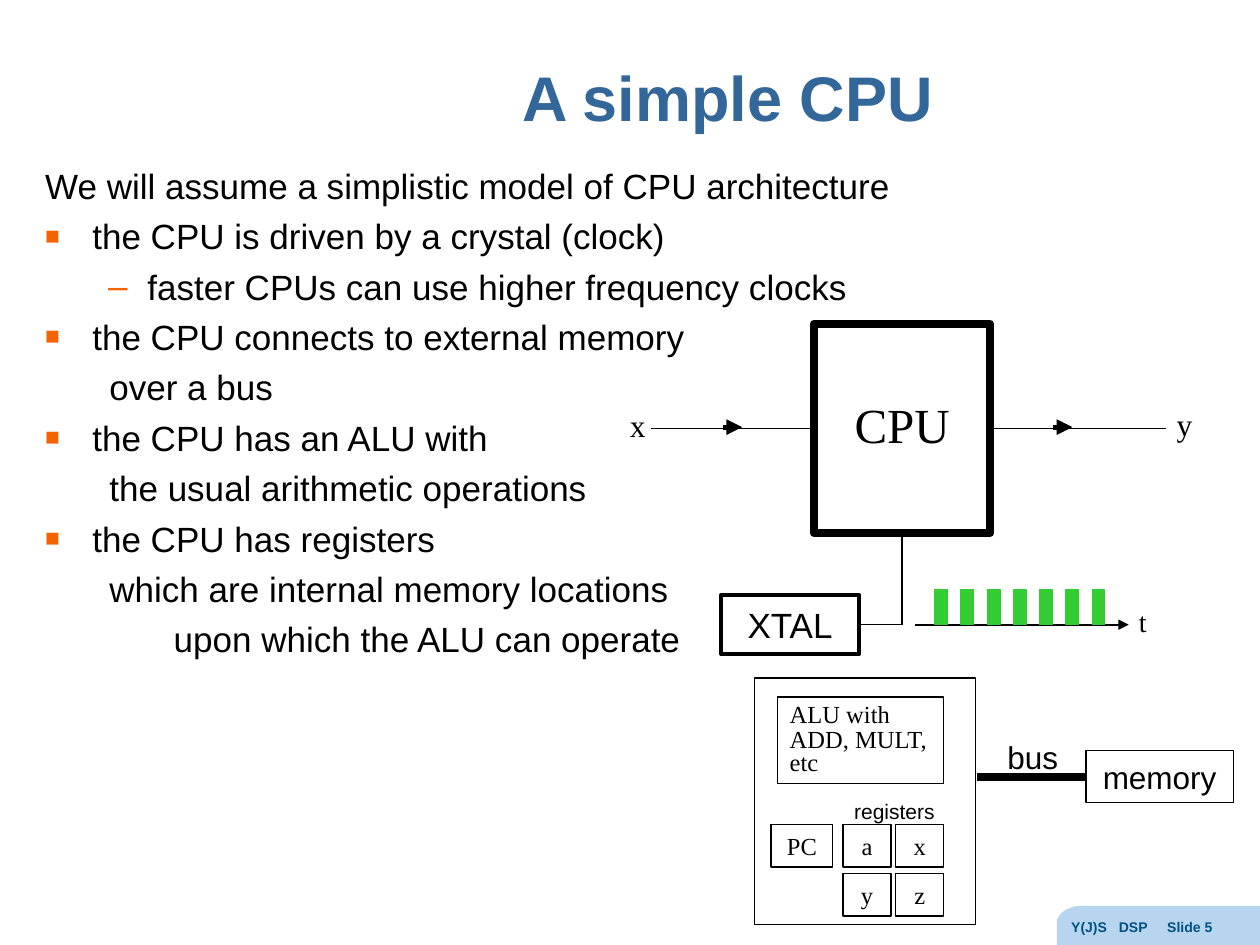
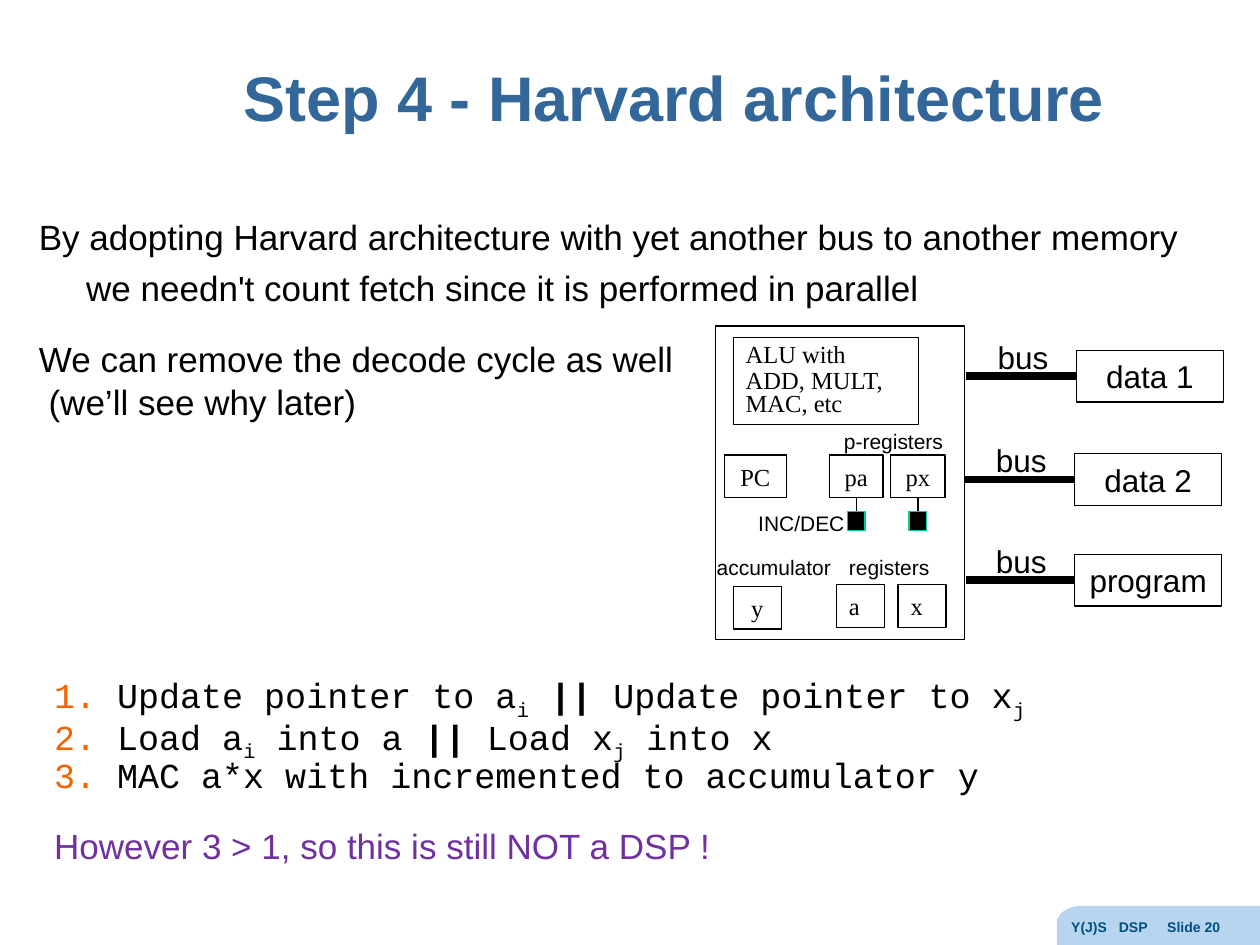
from lxml.etree import SubElement
from pptx import Presentation
from pptx.dml.color import RGBColor
from pptx.enum.shapes import MSO_CONNECTOR, MSO_SHAPE
from pptx.enum.text import MSO_ANCHOR, PP_ALIGN
from pptx.oxml.ns import qn
from pptx.util import Pt

COLORS = {
    "title": "336699", "ink": "000000", "paper": "FFFFFF", "bullet": "F46300",
    "tab": "B7D5EF", "tab_text": "005081", "pulse": "33CC33",
    "pointer_edge": "00CC99", "verdict": "7030A0",
}
SANS, SERIF, MONO = "Arial", "Times New Roman", "Courier New"

TITLE = {"name": SANS, "size": Pt(36), "bold": True, "color": "title"}
FOOTER = {"name": SANS, "size": Pt(8), "bold": True, "color": "tab_text"}
BODY = {"name": SANS, "size": Pt(20)}
CODE = {"name": MONO, "size": Pt(20)}
BUS = {"name": SANS, "size": Pt(18)}
CAPTION = {"name": SANS, "size": Pt(12)}
SIGNAL = {"name": SERIF, "size": Pt(18)}
TIME = {"name": SERIF, "size": Pt(16)}
CORE = {"name": SERIF, "size": Pt(28)}
REGISTER = {"name": SERIF, "size": Pt(14)}
SUB, BOLD = {"baseline": -25000}, {"bold": True}

CENTER = {"alignment": PP_ALIGN.CENTER}
TITLE_FORMAT = {**CENTER, "line_spacing": 0.9}
ALU_FORMAT = {"line_spacing": 0.8, "space_before": Pt(1)}
BODY_FORMAT = {"space_before": Pt(4.8)}

# Left margin, first-line indent, bullet tag and its attributes
LEVELS = {
    "intro": (27, -27, None, {}),
    "point": (27, -27, "a:buChar", {"char": "■"}),
    "dash": (58.5, -22.5, "a:buChar", {"char": "–"}),
    "more": (36.75, 0, None, {}),
    "deeper": (73.5, 0, None, {}),
    "hanging": (27, 0, None, {}),
    "flush": (0, 0, None, {}),
    "step": (36, -36, "a:buAutoNum", {"type": "arabicPeriod"}),
}


def block(slide, place, lines=(), font=None, layout=None, edge=None, fill=None,
          edge_color="ink", anchor=MSO_ANCHOR.MIDDLE):
    """Add a rectangle, or a bare text box when edge is None.

    A line is (content, level, extra format); content is text or (text, font) runs.
    """
    place = [Pt(length) for length in place]
    if edge is None:
        shape = slide.shapes.add_textbox(*place)
    else:
        shape = slide.shapes.add_shape(MSO_SHAPE.RECTANGLE, *place)
        shape.shadow.inherit = False
        shape.line.width = Pt(edge)
        shape.line.color.rgb = RGBColor.from_string(COLORS[edge_color])
        if fill:
            shape.fill.solid()
            shape.fill.fore_color.rgb = RGBColor.from_string(COLORS[fill])
        else:
            shape.fill.background()
    frame = shape.text_frame
    frame.word_wrap = True
    frame.vertical_anchor = anchor
    for index, (content, level, extra) in enumerate(lines):
        paragraph = frame.add_paragraph() if index else frame.paragraphs[0]
        for key, value in {"alignment": PP_ALIGN.LEFT, **(layout or {}), **extra}.items():
            setattr(paragraph, key, value)
        margin, indent, tag, attributes = LEVELS[level]
        properties = paragraph._p.get_or_add_pPr()
        properties.set("marL", str(Pt(margin)))
        properties.set("indent", str(Pt(indent)))
        if tag:
            SubElement(SubElement(properties, qn("a:buClr")), qn("a:srgbClr"),
                       val=COLORS["bullet"])
            if level == "point":
                SubElement(properties, qn("a:buSzPct"), val="70000")
            SubElement(properties, qn("a:buFont"), typeface=font["name"])
            SubElement(properties, qn(tag), attributes)
        for text, change in [(content, {})] if isinstance(content, str) else content:
            run = paragraph.add_run()
            run.text = text
            style = {"color": "ink", **font, **change}
            run.font.color.rgb = RGBColor.from_string(COLORS[style.pop("color")])
            for attribute in ("baseline", "spc"):
                if attribute in style:
                    run._r.get_or_add_rPr().set(attribute, str(style.pop(attribute)))
            for key, value in style.items():
                setattr(run.font, key, value)
    return shape


def wire(slide, start, end, weight=0.75, arrow=False, begin=None, finish=None):
    """Draw a straight line; begin and finish are (shape, side) to join."""
    line = slide.shapes.add_connector(
        MSO_CONNECTOR.STRAIGHT, *[Pt(length) for length in (*start, *end)])
    line.line.width = Pt(weight)
    line.line.color.rgb = RGBColor.from_string(COLORS["ink"])
    if arrow:
        SubElement(line.line._get_or_add_ln(), qn("a:tailEnd"), type="triangle")
    SubElement(line._element.spPr, qn("a:effectLst"))
    if begin:
        line.begin_connect(*begin)
    if finish:
        line.end_connect(*finish)


deck = Presentation()
deck.slide_width, deck.slide_height = Pt(720), Pt(540)

pages = [
    ("A simple CPU", 5, (152.6, 13, 526.3, 90), (18.7, 85.7, 689, 427), [
        ("We will assume a simplistic model of CPU architecture", "intro", {}),
        ("the CPU is driven by a crystal (clock)", "point", {}),
        ("faster CPUs can use higher frequency clocks", "dash", {}),
        ("the CPU connects to external memory", "point", {}),
        ("over a bus", "more", {}),
        ("the CPU has an ALU with", "point", {}),
        ("the usual arithmetic operations", "more", {}),
        ("the CPU has registers", "point", {}),
        ("which are internal memory locations", "more", {}),
        ("upon which the ALU can operate", "deeper", {}),
    ]),
    ("Step 4 - Harvard architecture", 20, (71.3, 13, 627.8, 90), (15.1, 115.2, 680, 257), [
        ("By adopting Harvard architecture with yet another bus to another memory", "intro", {}),
        ("we needn't count fetch since it is performed in parallel", "hanging", {}),
        ("We can remove the decode cycle as well", "flush", {"space_before": Pt(16.8)}),
        (" (we’ll see why later)", "flush", {"line_spacing": 0.8}),
    ]),
]
tab_outline = [(720, 540), (604, 540), (604, 525.6), (606.2, 522),
               (609.1, 519.8), (612.7, 518.4), (615.6, 517.7)]

slides = []
for title, number, title_place, body_place, body in pages:
    slide = deck.slides.add_slide(deck.slide_layouts[6])
    slides.append(slide)
    builder = slide.shapes.build_freeform(Pt(720), Pt(517.7))
    builder.add_line_segments([(Pt(x), Pt(y)) for x, y in tab_outline])
    corner_tab = builder.convert_to_shape()
    corner_tab.shadow.inherit = False
    corner_tab.fill.solid()
    corner_tab.fill.fore_color.rgb = RGBColor.from_string(COLORS["tab"])
    corner_tab.line.fill.background()
    # Widened letter spacing on the two gaps, in hundredths of a point
    footer = [("Y(J)S", {}), (" ", {"spc": 445}), ("DSP", {}), (" ", {"spc": 890}),
              (f"Slide {number}", {})]
    block(slide, (605, 521.5, 115, 18.5), [(footer, "flush", {})], FOOTER,
          anchor=MSO_ANCHOR.TOP)
    block(slide, title_place, [(title, "flush", {})], TITLE, TITLE_FORMAT)
    text = block(slide, body_place, body, BODY, BODY_FORMAT, anchor=MSO_ANCHOR.TOP)
    text.text_frame.margin_top = Pt(8.2)
simple, harvard = slides

# Simple CPU: signal path and clock
wire(simple, (372, 244.8), (666, 244.8))
cpu = block(simple, (465.1, 185, 100.8, 119.6), [("CPU", "flush", {})], CORE, CENTER, 4.5, "paper")
cpu.text_frame.margin_bottom = Pt(8.4)
crystal = block(simple, (412, 340, 79, 33.8), [("XTAL", "flush", {})], BODY, CENTER, 2.25)
wire(simple, (491, 356.9), (515.5, 356.9), begin=(crystal, 3))
wire(simple, (515.5, 356.9), (515.5, 304.6), finish=(cpu, 2))
wire(simple, (522.7, 357), (645, 357), 1, arrow=True)
for pulse in range(7):
    block(simple, (534.2 + 15 * pulse, 337, 7.2, 20), edge=0.75, fill="pulse", edge_color="pulse")
for x in (413.3, 602):
    wire(simple, (x, 244.1), (x + 10.8, 244.1), 3, arrow=True)
for name, x, y, font in (("t", 643.7, 341, TIME), ("x", 352.8, 229, SIGNAL), ("y", 665.3, 228.3, SIGNAL)):
    block(simple, (x, y, 23, 28), [(name, "flush", {})], font)

# Processors, each with its ALU
for slide, processor, alu, operations in (
    (simple, (431.3, 387.4, 126, 141), (444.2, 398.2, 95, 49.7), "ADD, MULT, etc"),
    (harvard, (409, 186.3, 142, 179), (419, 193, 106, 49.7), "ADD, MULT, MAC, etc"),
):
    block(slide, processor, edge=0.75, fill="paper")
    block(slide, alu, [("ALU with", "flush", {"space_before": Pt(0)}), (operations, "flush", {})],
          REGISTER, ALU_FORMAT, 0.75)

# Memories and their buses
for slide, name, x, y, bus_x in (
    (simple, "memory", 620.6, 429, 558),
    (harvard, "data 1", 615, 200.2, 552.2),
    (harvard, "data 2", 614, 259.2, 551),
    (harvard, "program", 614, 316.8, 552.2),
):
    memory = block(slide, (x, y, 84.2, 29.6), [(name, "flush", {})], BUS, CENTER, 0.75)
    wire(slide, (bus_x, y + 14.8), (x, y + 14.8), 4.5, finish=(memory, 1))
    block(slide, (x - 52, y - 10.8, 57, 28.8), [("bus", "flush", {})], BUS)

# Registers
for slide, name, x, y, width, layout in (
    (simple, "PC", 440.6, 471, 35.3, CENTER),
    (simple, "a", 481.7, 471, 27.4, CENTER),
    (simple, "x", 511.9, 471, 27.4, CENTER),
    (simple, "y", 481.7, 499, 27.4, CENTER),
    (simple, "z", 511.9, 499, 27.4, CENTER),
    (harvard, "PC", 414, 260, 35.3, CENTER),
    (harvard, "y", 419, 335, 27.4, CENTER),
    (harvard, "a", 478, 334, 27.4, {}),
    (harvard, "x", 513.2, 334, 27.4, {}),
):
    block(slide, (x, y, width, 24.5), [(name, "flush", {})], REGISTER, layout, 0.75)

# Pointer registers with their increment units
for name, x, width in (("pa", 474, 30.6), ("px", 509, 31)):
    pointer = block(harvard, (x, 260, width, 24.5), [(name, "flush", {})], REGISTER, CENTER, 0.75)
    middle = x + width / 2
    stepper = block(harvard, (middle - 5, 292.3, 10, 10.8), edge=0.75, fill="ink",
                    edge_color="pointer_edge")
    wire(harvard, (middle, 284.5), (middle, 292.3), begin=(pointer, 2), finish=(stepper, 0))

for slide, caption, x, y, width in (
    (simple, "registers", 481, 453, 65),
    (harvard, "p-registers", 475.2, 241.2, 75),
    (harvard, "INC/DEC", 426.2, 288, 68),
    (harvard, "accumulator", 402.5, 313.2, 89),
    (harvard, "registers", 478, 313.2, 65),
):
    block(slide, (x, y, width, 21.6), [(caption, "flush", {})], CAPTION)

# Instruction cycle
tight = {"line_spacing": 0.8, "space_before": Pt(2)}
block(harvard, (23.8, 383.8, 660, 111.6), [
    ([("Update pointer to a", {}), ("i", SUB), (" ", {}), ("||", BOLD),
      (" Update pointer to x", {}), ("j", SUB)], "step", {**tight, "space_before": Pt(4)}),
    ([("Load a", {}), ("i", SUB), (" into a ", {}), ("||", BOLD),
      (" Load x", {}), ("j", SUB), (" into x", {})], "step", tight),
    ("MAC a*x with incremented to accumulator y", "step", tight),
    ([("However 3 > 1, so this is still NOT a DSP !", {"name": SANS, "color": "verdict"})],
     "flush", {"line_spacing": 1.2, "space_before": Pt(12)}),
], CODE, anchor=MSO_ANCHOR.TOP)

deck.save("out.pptx")
